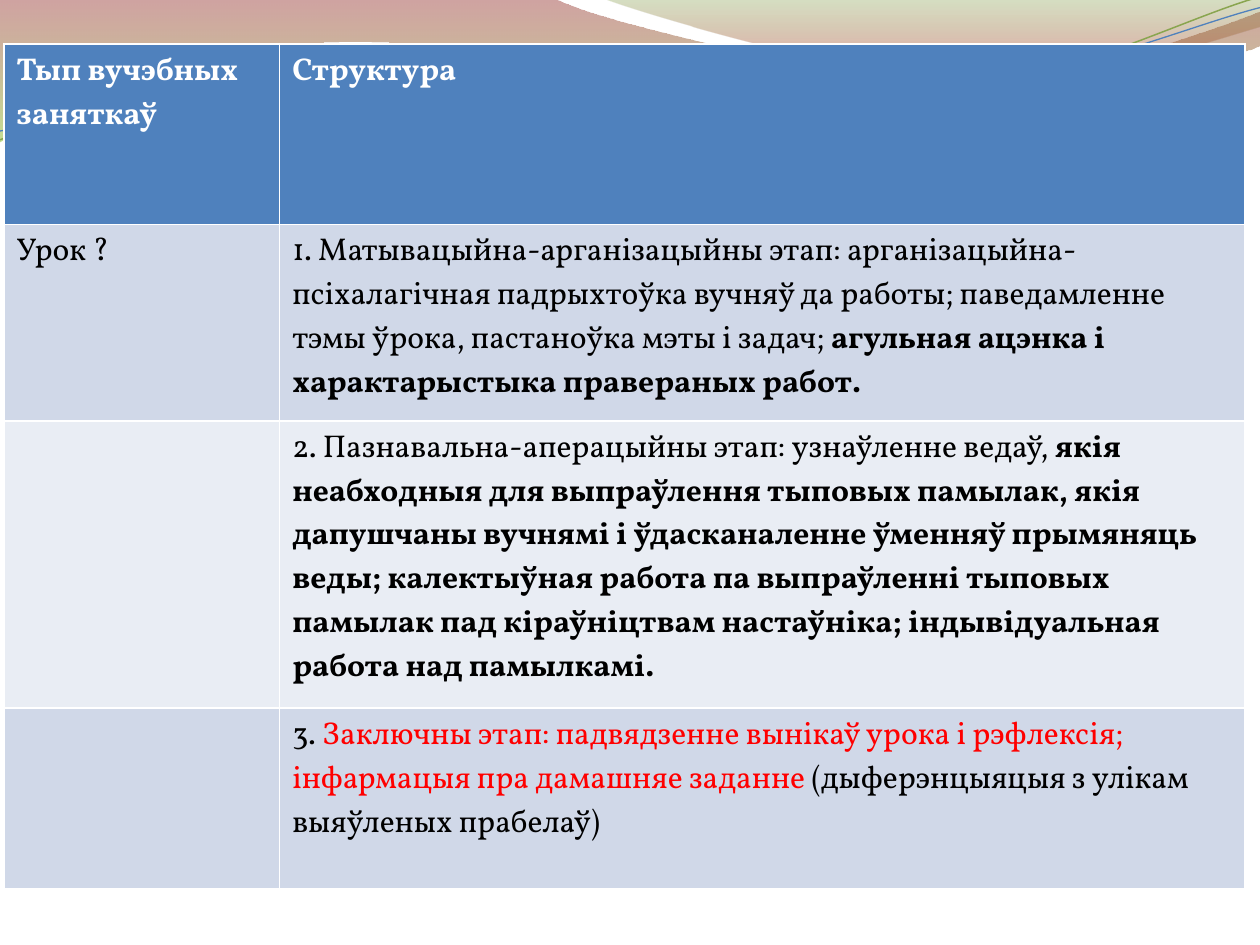
import math

from pptx import Presentation, util as u
from pptx.dml.color import RGBColor
from pptx.oxml import parse_xml
from pptx.oxml.ns import nsdecls

WHITE = RGBColor(0xFF, 0xFF, 0xFF)
BLACK = RGBColor(0x00, 0x00, 0x00)
RED = RGBColor(0xFF, 0x00, 0x00)
BLUE = RGBColor(0x4F, 0x81, 0xBD)
GREEN = RGBColor(0x89, 0xA5, 0x4F)
BAND_DARK = RGBColor(0xD0, 0xD8, 0xE8)
BAND_LIGHT = RGBColor(0xE9, 0xED, 0xF4)
WAVE_RED = RGBColor(0x97, 0x33, 0x30)
WAVE_LIME = RGBColor(0x95, 0xC2, 0x38)
CREST_GREEN = RGBColor(0x76, 0x95, 0x37)
CREST_RED = RGBColor(0xBE, 0x33, 0x30)
FONT = "Vollkorn"
GRID_COLUMNS = 10
THREAD_TURN = 357.3

LEFT_WAVE = [
    (0, 0), (4.4, -0.01),
    (4.76, 0.17, 6.64, 0.63, 7.58, 0.63), (8.53, 0.63, 9.58, 0.26, 10, 0.09),
    (10.01, 0.36),
    (9.83, 0.44, 8.7, 0.76, 7.46, 0.75), (6.22, 0.75, 3.82, 0.28, 2.57, 0.34),
    (1.29, 0.36, 0.46, 0.83, -0.01, 1.13), (0, 0),
]
RIGHT_WAVE = [
    (4.79, -0.01),
    (5.09, 0.11, 6.82, 0.62, 7.69, 0.65), (8.56, 0.69, 9.61, 0.32, 10, 0.21),
    (10, 0), (4.79, -0.01),
]
GREEN_LINE = [
    (0, 1.11),
    (0.48, 0.93, 1.58, 0.57, 2.77, 0.52), (3.95, 0.47, 5.93, 0.89, 7.13, 0.8),
    (8.33, 0.71, 9.38, 0.15, 9.98, -0.02),
]
BLUE_LINE = [
    (0, 1.04),
    (0.47, 0.96, 1.64, 0.61, 2.83, 0.56), (4.03, 0.51, 5.97, 0.84, 7.17, 0.75),
    (8.36, 0.67, 9.41, 0.21, 10, 0.06),
]

COLUMNS = [2.19, 7.66]
ROWS = [1.43, 1.56, 2.28, 1.43]
LESSON = [
    [[("Тып вучэбных заняткаў", True, WHITE)], [("Структура", True, WHITE)]],
    [[("Урок ?", False, BLACK)],
     [("1. Матывацыйна-арганізацыйны этап: арганізацыйна-псіхалагічная "
       "падрыхтоўка вучняў да работы; паведамленне тэмы ўрока, пастаноўка "
       "мэты і задач; ", False, BLACK),
      ("агульная ацэнка і характарыстыка правераных работ.", True, BLACK)]],
    [[],
     [("2. Пазнавальна-аперацыйны этап: узнаўленне ведаў, ", False, BLACK),
      ("якія неабходныя для выпраўлення тыповых памылак, якія дапушчаны "
       "вучнямі і ўдасканаленне ўменняў прымяняць веды; калектыўная работа "
       "па выпраўленні тыповых памылак пад кіраўніцтвам настаўніка; "
       "індывідуальная работа над памылкамі.", True, BLACK)]],
    [[],
     [("3. ", False, BLACK),
      ("Заключны этап: падвядзенне вынікаў урока і рэфлексія; інфармацыя "
       "пра дамашняе заданне ", False, RED),
      ("(дыферэнцыяцыя з улікам выяўленых прабелаў)", False, BLACK)]],
]


def scale_box(unit, box):
    """Convert a box from grid units to lengths."""
    return [round(unit * length) for length in box]


def path_xml(segments, box, turn, unit):
    """Describe the segments as path commands inside a turned box."""
    left, top, width, height = box
    angle = math.radians(-turn)
    middle_x, middle_y = left + width / 2, top + height / 2
    commands = []
    for index, segment in enumerate(segments):
        marks = ""
        for x, y in zip(segment[::2], segment[1::2]):
            across, down = x - middle_x, y - middle_y
            local_x = width / 2 + across * math.cos(angle) - down * math.sin(angle)
            local_y = height / 2 + across * math.sin(angle) + down * math.cos(angle)
            marks += f'<a:pt x="{round(local_x * unit)}" y="{round(local_y * unit)}"/>'
        name = "cubicBezTo" if len(segment) == 6 else "lnTo" if index else "moveTo"
        commands.append(f"<a:{name}>{marks}</a:{name}>")
    if segments[0] == segments[-1]:
        commands.append("<a:close/>")
    return (f'<a:path {nsdecls("a")} w="{round(width * unit)}" '
            f'h="{round(height * unit)}">{"".join(commands)}</a:path>')


def add_outline(page, unit, box, segments, turn=0):
    """Draw a curved freeform in the box."""
    ends = [(round(s[-2] * unit), round(s[-1] * unit)) for s in segments]
    builder = page.shapes.build_freeform(*ends[0])
    builder.add_line_segments(ends[1:], close=False)
    shape = builder.convert_to_shape()
    shape.left, shape.top, shape.width, shape.height = scale_box(unit, box)
    shape.rotation = turn
    shape.shadow.inherit = False
    route = shape.element.spPr.find(".//{*}pathLst/{*}path")
    route.getparent().replace(route, parse_xml(path_xml(segments, box, turn, unit)))
    return shape


def add_wave(page, unit, box, segments, stops):
    """Draw a closed wave with a translucent vertical gradient."""
    shape = add_outline(page, unit, box, segments)
    shape.line.fill.background()
    shape.fill.background()
    marks = "".join(
        f'<a:gs pos="{place * 1000}"><a:srgbClr val="{color}">'
        f'<a:alpha val="{alpha * 1000}"/></a:srgbClr></a:gs>'
        for place, color, alpha in stops)
    gradient = parse_xml(
        f'<a:gradFill {nsdecls("a")} rotWithShape="1"><a:gsLst>{marks}</a:gsLst>'
        '<a:lin ang="5400000" scaled="0"/></a:gradFill>')
    properties = shape.element.spPr
    properties.replace(properties.find("{*}noFill"), gradient)


def add_thread(page, unit, box, segments, color, weight):
    """Draw an open thin curve."""
    shape = add_outline(page, unit, box, segments, THREAD_TURN)
    shape.fill.background()
    shape.line.color.rgb = color
    shape.line.width = u.Pt(weight)


def add_header_waves(page, unit):
    """Place the waves and threads along the top of the page."""
    add_wave(page, unit, (-0.01, -0.01, 10.02, 1.14), LEFT_WAVE,
             [(0, WAVE_RED, 45), (100, WAVE_LIME, 55)])
    add_wave(page, unit, (4.79, -0.01, 5.21, 0.7), RIGHT_WAVE,
             [(0, CREST_GREEN, 30), (80, CREST_RED, 45)])
    add_thread(page, unit, (-0.02, 0.22, 10.02, 0.71), GREEN_LINE, GREEN, 0.85)
    add_thread(page, unit, (-0.02, 0.3, 10.03, 0.58), BLUE_LINE, BLUE, 0.75)


def fill_cell(cell, spans, color):
    """Write the formatted spans into a cell and colour it."""
    cell.fill.solid()
    cell.fill.fore_color.rgb = color
    para = cell.text_frame.paragraphs[0]
    for words, bold, ink in spans:
        span = para.add_run()
        span.text = words
        span.font.name = FONT
        span.font.size = u.Pt(18)
        span.font.bold = bold
        span.font.color.rgb = ink


def add_lesson_table(page, box):
    """Place the lesson structure table in the box."""
    _, _, width, height = box
    table = page.shapes.add_table(len(ROWS), len(COLUMNS), *box).table
    for column, share in zip(table.columns, COLUMNS):
        column.width = round(width * share / sum(COLUMNS))
    for row, share in zip(table.rows, ROWS):
        row.height = round(height * share / sum(ROWS))
    fills = [BLUE, BAND_DARK, BAND_LIGHT, BAND_DARK]
    for index, (row, color) in enumerate(zip(LESSON, fills)):
        for column, spans in enumerate(row):
            fill_cell(table.cell(index, column), spans, color)


def main():
    """Build the slide and save it."""
    deck = Presentation()
    deck.slide_width, deck.slide_height = u.Inches(10), u.Inches(7.5)
    page = deck.slides.add_slide(deck.slide_layouts[6])
    page.background.fill.solid()
    page.background.fill.fore_color.rgb = WHITE
    unit = deck.slide_width / GRID_COLUMNS
    add_header_waves(page, unit)
    add_lesson_table(page, scale_box(unit, (0.03, 0.35, sum(COLUMNS), sum(ROWS))))
    deck.save("out.pptx")


if __name__ == "__main__":
    main()
